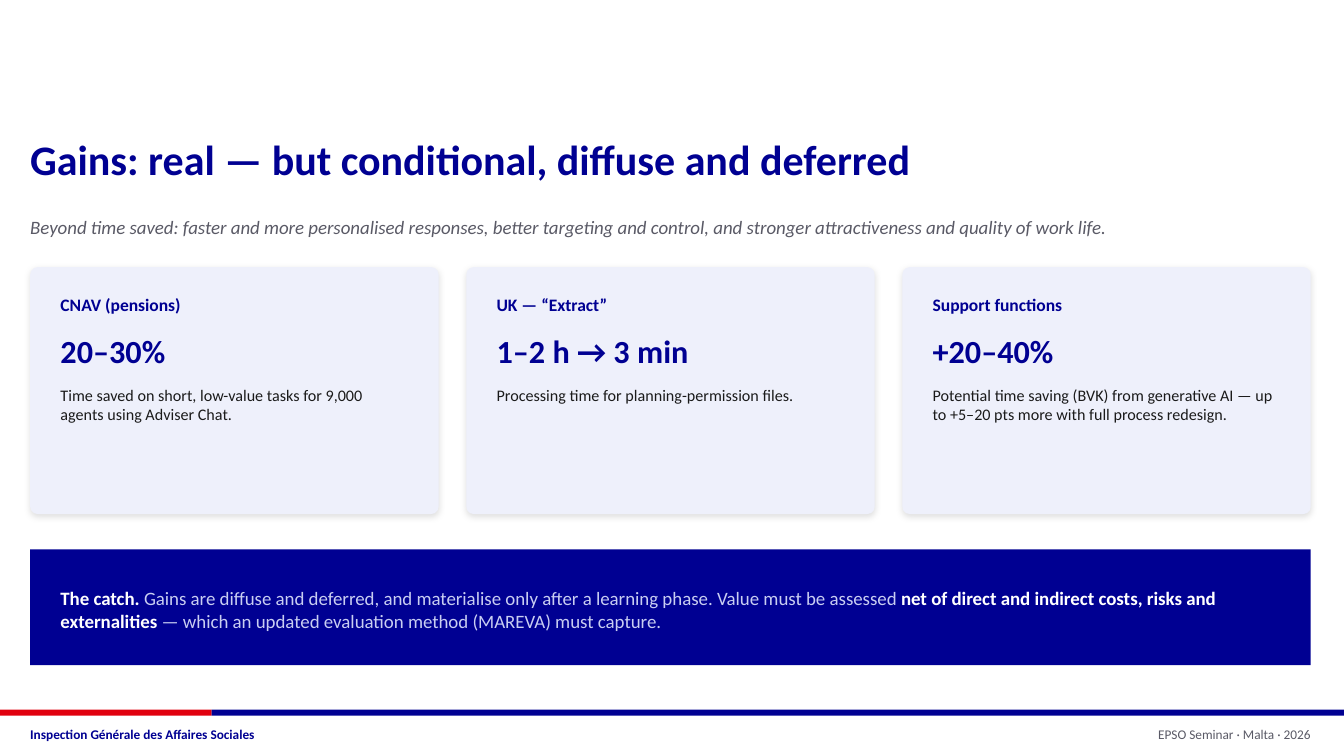
"""Build the slide on the gains from AI: three result cards and the catch."""
from lxml.etree import SubElement
from pptx import Presentation
from pptx.dml.color import RGBColor
from pptx.enum.shapes import MSO_SHAPE
from pptx.enum.text import MSO_ANCHOR, PP_ALIGN
from pptx.oxml.ns import qn
from pptx.util import Inches, Pt

NAVY, RED, GREY, INK = "000092", "E1000F", "5A5A66", "1A1A1A"
WHITE, PALE, LAVENDER = "FFFFFF", "EEF0FB", "C9CEF2"
WIDTH, HEIGHT = 13.33, 7.5
MARGIN = PADDING = 0.3
CONTENT = 12.7
COLUMNS, GUTTER = 3, 0.275
CARD_WIDTH = (CONTENT - (COLUMNS - 1) * GUTTER) / COLUMNS
CARD_TOP, CARD_HEIGHT = 2.65, 2.45
CATCH_TOP, CATCH_HEIGHT = 5.45, 1.15
STRIPE_TOP, STRIPE_HEIGHT, RED_WIDTH = 7.04, 0.06, 2.1
FOOTER_TOP, FOOTER_HEIGHT = 7.13, 0.3

deck = Presentation()
deck.slide_width, deck.slide_height = Inches(WIDTH), Inches(HEIGHT)
slide = deck.slides.add_slide(deck.slide_layouts[6])


def write(text, left, top, width, height, size=13.5, color=NAVY, bold=False,
          italic=False, align=PP_ALIGN.LEFT, anchor=MSO_ANCHOR.MIDDLE):
    """Write a string, or a list of (string, colour, bold) parts, in one paragraph."""
    frame = slide.shapes.add_textbox(*map(Inches, (left, top, width, height))).text_frame
    frame.word_wrap = True
    frame.vertical_anchor = anchor
    frame.margin_left = frame.margin_right = frame.margin_top = frame.margin_bottom = 0
    paragraph = frame.paragraphs[0]
    paragraph.alignment = align
    parts = [(text, color, bold)] if isinstance(text, str) else text
    for words, part_color, part_bold in parts:
        run = paragraph.add_run()
        run.text = words
        run.font.name, run.font.size = "Calibri", Pt(size)
        run.font.bold, run.font.italic = part_bold, italic
        run.font.color.rgb = RGBColor.from_string(part_color)


def panel(left, top, width, height, color, kind=MSO_SHAPE.RECTANGLE):
    """Add a filled shape without line or shadow."""
    shape = slide.shapes.add_shape(kind, *map(Inches, (left, top, width, height)))
    shape.shadow.inherit = False
    shape.fill.solid()
    shape.fill.fore_color.rgb = RGBColor.from_string(color)
    shape.line.fill.background()
    return shape


panel(0, STRIPE_TOP, RED_WIDTH, STRIPE_HEIGHT, RED)
panel(RED_WIDTH, STRIPE_TOP, WIDTH - RED_WIDTH, STRIPE_HEIGHT, NAVY)
write("Inspection Générale des Affaires Sociales", MARGIN, FOOTER_TOP, 8, FOOTER_HEIGHT,
      size=9.5, bold=True)
write("EPSO Seminar · Malta · 2026", 8.5, FOOTER_TOP, 4.5, FOOTER_HEIGHT,
      size=9.5, color=GREY, align=PP_ALIGN.RIGHT)

write("Gains: real — but conditional, diffuse and deferred", MARGIN, 1.15, CONTENT, 0.85,
      size=30, bold=True)
write("Beyond time saved: faster and more personalised responses, better targeting and "
      "control, and stronger attractiveness and quality of work life.",
      MARGIN, 2, CONTENT, 0.5, color=GREY, italic=True)

gains = [
    ("CNAV (pensions)", "20–30%",
     "Time saved on short, low-value tasks for 9,000 agents using Adviser Chat."),
    ("UK — “Extract”", "1–2 h → 3 min",
     "Processing time for planning-permission files."),
    ("Support functions", "+20–40%",
     "Potential time saving (BVK) from generative AI — up to +5–20 pts more with full "
     "process redesign."),
]
for column, (area, gain, detail) in enumerate(gains):
    left = MARGIN + column * (CARD_WIDTH + GUTTER)
    card = panel(left, CARD_TOP, CARD_WIDTH, CARD_HEIGHT, PALE, MSO_SHAPE.ROUNDED_RECTANGLE)
    card.adjustments[0] = 0.03
    effects = card.element.spPr.find(qn("a:effectLst"))
    shadow = SubElement(effects, qn("a:outerShdw"), blurRad=str(Pt(5)), dist=str(Pt(2)),
                        dir="5400000", algn="ctr", rotWithShape="0")
    shade = SubElement(shadow, qn("a:srgbClr"), val="000000")
    SubElement(shade, qn("a:alpha"), val="12000")

    text_left, text_width = left + PADDING, CARD_WIDTH - 2 * PADDING
    write(area, text_left, CARD_TOP + 0.2, text_width, 0.35, size=12.5, bold=True)
    write(gain, text_left, CARD_TOP + 0.55, text_width, 0.55, size=23, bold=True)
    write(detail, text_left, CARD_TOP + 1.17, text_width, 1.2, size=11.5, color=INK,
          anchor=MSO_ANCHOR.TOP)

panel(MARGIN, CATCH_TOP, CONTENT, CATCH_HEIGHT, NAVY)
catch = [
    ("The catch. ", WHITE, True),
    ("Gains are diffuse and deferred, and materialise only after a learning phase. "
     "Value must be assessed ", LAVENDER, False),
    ("net of direct and indirect costs, risks and externalities", WHITE, True),
    (" — which an updated evaluation method (MAREVA) must capture.", LAVENDER, False),
]
write(catch, MARGIN + PADDING, CATCH_TOP + 0.17, CONTENT - 2 * PADDING, 0.85)

deck.save("out.pptx")
